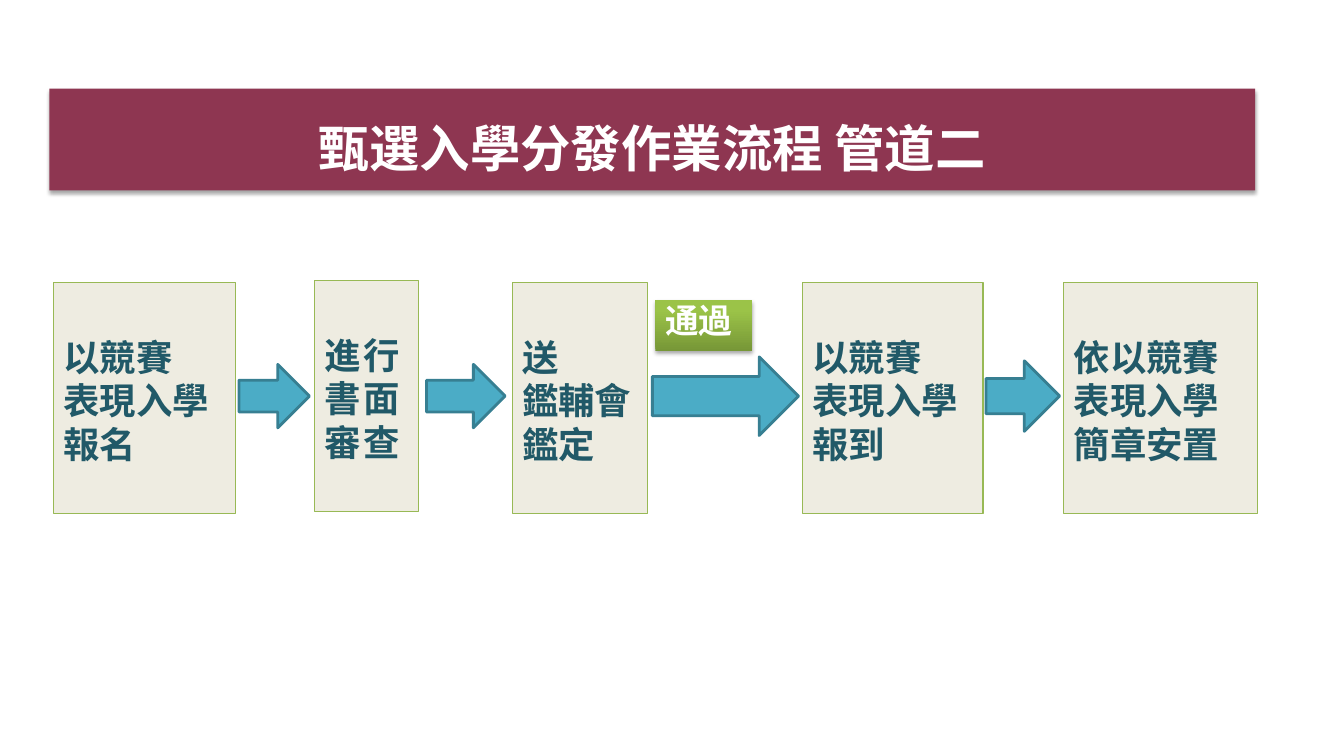
import pptx
import pptx.util
import pptx.dml.color
import pptx.enum.shapes
import pptx.enum.text
import lxml.etree
from dataclasses import dataclass

Inches = pptx.util.Inches
Pt = pptx.util.Pt

TITLE = ("甄選入學分發作業流程 管道二", (0.49, 0.88, 11.96, 1.01))
PASS_LABEL = ("通過", (6.5, 2.98, 0.96, 0.5))
STEPS = [
    {"lines": ["以競賽", "表現入學", "報名"], "left": 0.53, "top": 2.8, "width": 1.81},
    {"lines": ["進行", "書面", "審查"], "left": 3.12, "top": 2.78, "width": 1.03, "spacing": 160},
    {"lines": ["送", "鑑輔會 鑑定"], "left": 5.08, "top": 2.8, "width": 1.34},
    {"lines": ["以競賽", "表現入學報到"], "left": 7.96, "top": 2.8, "width": 1.79},
    {"lines": ["依以競賽表現入學簡章安置"], "left": 10.55, "top": 2.8, "width": 1.92},
]
STEP_HEIGHT = 2.29
ARROWS = [(2.37, 0.7, 0.63), (4.23, 0.78, 0.63), (6.47, 1.45, 0.78), (9.78, 0.73, 0.7)]
ARROW_MIDDLE = 3.93


@dataclass(frozen=True)
class Theme:
    font: str = "Noto Sans CJK SC"
    title_fill: str = "8E3651"
    step_fill: str = "EEECE1"
    step_line: str = "98B955"
    step_text: str = "215968"
    arrow_fill: str = "4BACC6"
    arrow_line: str = "377F92"
    label_dark: str = "779737"
    label_light: str = "9BC348"
    white: str = "FFFFFF"
    title_size: int = 36
    step_size: int = 26
    label_size: int = 24
    step_leading: int = 31


THEME = Theme()
KINDS = pptx.enum.shapes.MSO_SHAPE
ALIGN = pptx.enum.text.PP_ALIGN
ANCHOR = pptx.enum.text.MSO_ANCHOR


def color(value):
    return pptx.dml.color.RGBColor.from_string(value)


def add_block(slide, kind, box, fill=None, line=None, line_width=0.75):
    shape = slide.shapes.add_shape(kind, *map(Inches, box))
    shape.shadow.inherit = False
    if fill:
        shape.fill.solid()
        shape.fill.fore_color.rgb = color(fill)
    if line:
        shape.line.color.rgb = color(line)
        shape.line.width = Pt(line_width)
    else:
        shape.line.fill.background()
    return shape


def add_shadow(shape):
    namespace = pptx.oxml.ns.nsuri("a")
    effects = shape.element.spPr.find(pptx.oxml.ns.qn("a:effectLst"))
    effects.append(lxml.etree.fromstring(
        f'<a:outerShdw xmlns:a="{namespace}" blurRad="{Pt(3.1)}" dist="{Pt(1.8)}" '
        'dir="5400000" rotWithShape="0"><a:srgbClr val="000000">'
        '<a:alpha val="35000"/></a:srgbClr></a:outerShdw>'))


def write(shape, lines, size, text_color, align, anchor, top=0, bottom=0,
          leading=None, spacing=None, wrap=True):
    frame = shape.text_frame
    frame.word_wrap = wrap
    frame.vertical_anchor = anchor
    frame.margin_top, frame.margin_bottom = Inches(top), Inches(bottom)
    frame.text = "\n".join(lines)
    for paragraph in frame.paragraphs:
        paragraph.alignment = align
        if leading:
            paragraph.line_spacing = Pt(leading)
        paragraph.font.name = THEME.font
        paragraph.font.size = Pt(size)
        paragraph.font.bold = True
        paragraph.font.color.rgb = color(text_color)
        for run in paragraph.runs:
            properties = run.font._element
            if spacing:
                properties.set("spc", str(spacing))
            east_asian = lxml.etree.SubElement(properties, pptx.oxml.ns.qn("a:ea"))
            east_asian.set("typeface", THEME.font)


def add_title(slide):
    text, box = TITLE
    banner = add_block(slide, KINDS.RECTANGLE, box, THEME.title_fill)
    add_shadow(banner)
    write(banner, [text], THEME.title_size, THEME.white, ALIGN.CENTER, ANCHOR.TOP, top=0.28)


def add_step(slide, step):
    box = (step["left"], step["top"], step["width"], STEP_HEIGHT)
    shape = add_block(slide, KINDS.RECTANGLE, box, THEME.step_fill, THEME.step_line)
    write(shape, step["lines"], THEME.step_size, THEME.step_text, ALIGN.LEFT, ANCHOR.MIDDLE,
          top=0.1, bottom=0.05, leading=THEME.step_leading, spacing=step.get("spacing"))


def add_pass_label(slide):
    text, box = PASS_LABEL
    label = add_block(slide, KINDS.RECTANGLE, box)
    label.fill.gradient()
    label.fill.gradient_angle = 90
    stops = zip(label.fill.gradient_stops, (0, 0.8), (THEME.label_dark, THEME.label_light))
    for stop, position, value in stops:
        stop.position = position
        stop.color.rgb = color(value)
    add_shadow(label)
    write(label, [text], THEME.label_size, THEME.white, ALIGN.LEFT, ANCHOR.TOP, wrap=False)


def main():
    presentation = pptx.Presentation()
    presentation.slide_width, presentation.slide_height = Inches(13.33), Inches(7.5)
    slide = presentation.slides.add_slide(presentation.slide_layouts[6])
    add_title(slide)
    for step in STEPS:
        add_step(slide, step)
    add_pass_label(slide)
    for left, width, height in ARROWS:
        box = (left, ARROW_MIDDLE - height / 2, width, height)
        add_block(slide, KINDS.RIGHT_ARROW, box, THEME.arrow_fill, THEME.arrow_line, 2)
    presentation.save("out.pptx")


if __name__ == "__main__":
    main()
